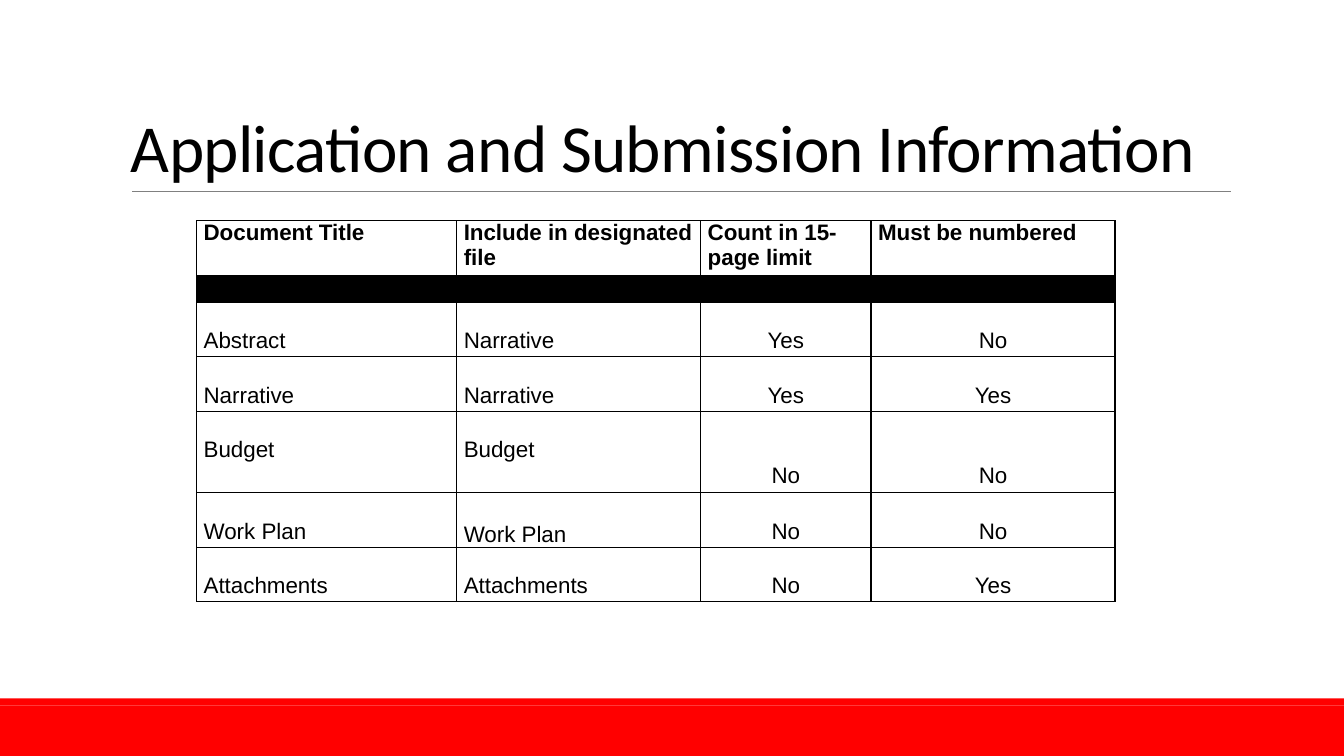
from dataclasses import dataclass

from lxml import etree
from pptx import Presentation
from pptx.dml.color import RGBColor
from pptx.enum.shapes import MSO_CONNECTOR, MSO_SHAPE
from pptx.enum.text import MSO_ANCHOR, PP_ALIGN
from pptx.oxml.ns import qn
from pptx.util import Inches, Pt

RECT = MSO_SHAPE.RECTANGLE
LINE = MSO_CONNECTOR.STRAIGHT
TOP, BOTTOM = MSO_ANCHOR.TOP, MSO_ANCHOR.BOTTOM
LEFT, CENTER = PP_ALIGN.LEFT, PP_ALIGN.CENTER


@dataclass(frozen=True)
class Theme:
    ink: str = "000000"
    band: str = "FF0000"
    rule: str = "808080"
    head: str = "Calibri"
    body: str = "Arial"
    title: float = 48
    cell: float = 16
    small: float = 8
    rule_width: float = 0.5
    border: float = 1


THEME = Theme()
COLS = [2.58, 2.42, 1.69, 2.42]
ROWS = [0.54, 0.27, 0.54, 0.54, 0.81, 0.54, 0.54]
TEXT_ROW = 0.26  # height of one line of cell text
HEADS = ["Document Title", "Include in designated file",
         "Count in 15-page limit", "Must be numbered"]
DOCS = [
    ["Abstract", "Narrative", "Yes", "No"],
    ["Narrative", "Narrative", "Yes", "Yes"],
    ["Budget", "Budget", "No", "No"],
    ["Work Plan", "Work Plan", "No", "No"],
    ["Attachments", "Attachments", "No", "Yes"],
]


def color(code):
    return RGBColor.from_string(code)


def add_run(para, text, font, size, bold=False):
    run = para.add_run()
    run.text = text
    run.font.name = font
    run.font.size = Pt(size)
    run.font.bold = bold
    run.font.color.rgb = color(THEME.ink)
    return run


def add_title(slide, left, top, width, height):
    box = slide.shapes.add_textbox(Inches(left), Inches(top),
                                   Inches(width), Inches(height))
    frame = box.text_frame
    frame.word_wrap = True
    frame.vertical_anchor = BOTTOM
    para = frame.paragraphs[0]
    para.line_spacing = 0.85
    run = add_run(para, "Application and Submission Information",
                  THEME.head, THEME.title)
    run.font._element.set("spc", "-50")

    # Rule along the lower edge of the title
    base = Inches(top + height)
    rule = slide.shapes.add_connector(LINE, Inches(left + 0.11), base,
                                      Inches(left + width + 0.01), base)
    rule.line.color.rgb = color(THEME.rule)
    rule.line.width = Pt(THEME.rule_width)
    etree.SubElement(rule._element.spPr, qn("a:effectLst"))


def add_footer(slide, left, top, width, height):
    strip = 0.07
    for start, tall in ((top + strip, height - strip), (top, strip)):
        bar = slide.shapes.add_shape(RECT, Inches(left), Inches(start),
                                     Inches(width), Inches(tall))
        bar.shadow.inherit = False
        bar.fill.solid()
        bar.fill.fore_color.rgb = color(THEME.band)
        bar.line.fill.background()


def add_borders(cell):
    props = cell._tc.get_or_add_tcPr()
    for side in ("lnL", "lnR", "lnT", "lnB"):
        edge = etree.SubElement(props, qn("a:" + side),
                                w=str(Pt(THEME.border)))
        fill = etree.SubElement(edge, qn("a:solidFill"))
        etree.SubElement(fill, qn("a:srgbClr"), val=THEME.ink)


def style_cell(cell, drop=0, anchor=TOP):
    cell.margin_left = cell.margin_right = Inches(0.07)
    cell.margin_top, cell.margin_bottom = Inches(drop), 0
    cell.vertical_anchor = anchor
    add_borders(cell)
    cell.fill.background()


def fill_cell(cell, text, align=LEFT, bold=False):
    para = cell.text_frame.paragraphs[0]
    para.alignment = align
    add_run(para, text, THEME.body, THEME.cell, bold)


def add_grid(slide, left, top, width, height):
    grid = slide.shapes.add_table(len(ROWS), len(COLS), Inches(left),
                                  Inches(top), Inches(width),
                                  Inches(height)).table
    grid.first_row = grid.horz_banding = False
    for col, size in zip(grid.columns, COLS):
        col.width = Inches(size)
    for row, size in zip(grid.rows, ROWS):
        row.height = Inches(size)

    # Header and the black divider under it
    for col, head in enumerate(HEADS):
        cell = grid.cell(0, col)
        style_cell(cell)
        fill_cell(cell, head, bold=True)
        gap = grid.cell(1, col)
        style_cell(gap)
        gap.fill.solid()
        gap.fill.fore_color.rgb = color(THEME.ink)
        mark = gap.text_frame.paragraphs[0]._p.get_or_add_endParaRPr()
        mark.set("sz", str(int(THEME.small * 100)))

    # Documents: answers are centred, and sit a line lower in the tall row
    for row, doc in enumerate(DOCS, 2):
        for col, text in enumerate(doc):
            cell = grid.cell(row, col)
            answer = col > 1
            lines = 2 if answer and doc[0] == "Budget" else 1
            if col == 1 and text == "Work Plan":
                style_cell(cell, anchor=BOTTOM)
            else:
                style_cell(cell, drop=lines * TEXT_ROW)
            fill_cell(cell, text, CENTER if answer else LEFT)


def main():
    deck = Presentation()
    deck.slide_width, deck.slide_height = Inches(13.33), Inches(7.5)
    slide = deck.slides.add_slide(deck.slide_layouts[6])
    add_footer(slide, 0, 6.93, 13.33, 0.57)
    add_title(slide, 1.2, 0.31, 11, 1.59)
    add_grid(slide, 1.95, 2.19, sum(COLS), sum(ROWS))
    deck.save("out.pptx")


if __name__ == "__main__":
    main()
